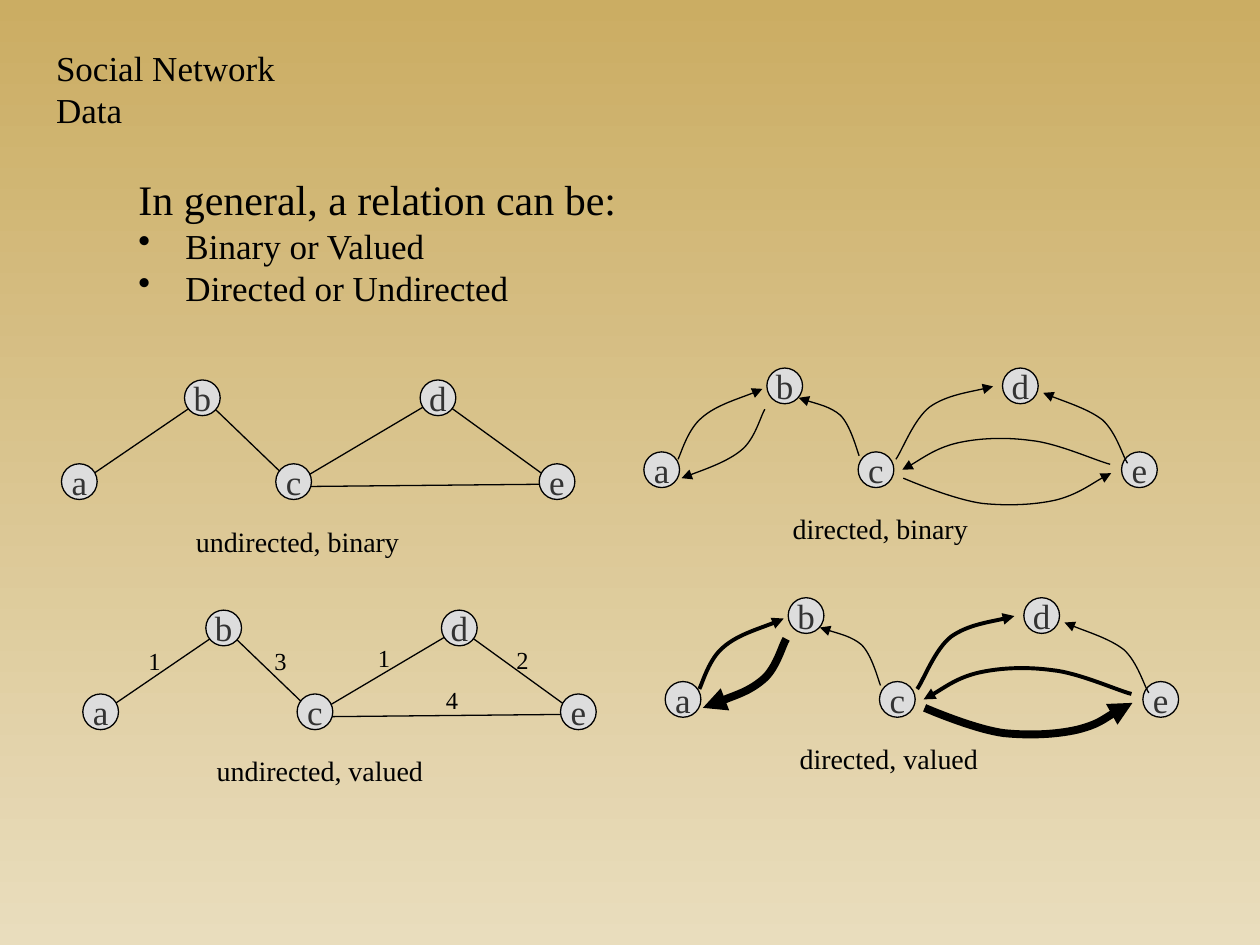
from pptx import Presentation
from pptx.dml.color import RGBColor
from pptx.enum.shapes import MSO_SHAPE
from pptx.enum.text import MSO_ANCHOR, PP_ALIGN
from pptx.oxml.ns import qn
from pptx.oxml.xmlchemy import OxmlElement
from pptx.util import Cm, Pt

OVAL = MSO_SHAPE.OVAL
MIDDLE = MSO_ANCHOR.MIDDLE
CENTER = PP_ALIGN.CENTER

# Offsets in cm from the top left corner of node a
NODE_SIZE = 0.72
NODES = {"a": (0, 0), "b": (2.48, -1.69), "c": (4.32, 0),
         "e": (9.63, 0), "d": (7.23, -1.69)}
EDGES = [(0.38, 0.38), (2.87, -1.32), (4.67, 0.41),
         (7.59, -1.32), (9.98, 0.41), (4.75, 0.46)]

# Bezier points: a start, then two controls and an end per segment
ARROWS = {
    "ab": [(0.69, 0.15), (0.76, 0), (0.89, -0.46), (1.17, -0.69),
           (1.45, -0.94), (2.13, -1.14), (2.39, -1.27)],
    "ba": [(2.44, -0.86), (2.36, -0.74), (2.24, -0.25), (1.96, -0.03),
           (1.68, 0.2), (1.02, 0.43), (0.76, 0.53)],
    "cd": [(5.08, 0.15), (5.21, -0.03), (5.44, -0.66), (5.77, -0.91),
           (6.1, -1.14), (6.76, -1.24), (7.04, -1.32)],
    "ce": [(5.23, 0.53), (5.49, 0.64), (6.3, 0.97), (6.83, 1.04),
           (7.34, 1.09), (7.87, 1.07), (8.31, 0.97),
           (8.74, 0.86), (9.19, 0.53), (9.42, 0.43)],
    "ed": [(9.75, 0.23), (9.65, 0.08), (9.53, -0.38), (9.25, -0.64),
           (8.97, -0.86), (8.31, -1.07), (8.05, -1.19)],
    "ec": [(9.4, 0.25), (9.12, 0.18), (8.33, -0.18), (7.8, -0.23),
           (7.29, -0.3), (6.76, -0.28), (6.32, -0.18),
           (5.89, -0.08), (5.44, 0.25), (5.21, 0.36)],
    "cb": [(4.34, 0.08), (4.29, -0.05), (4.17, -0.53), (3.96, -0.74),
           (3.76, -0.91), (3.3, -1.02), (3.12, -1.09)],
}
ARROW_WIDTHS = {"ab": 2.25, "ba": 4.5, "cd": 2.25, "ce": 4.5, "ec": 2.25}


def color(hex_text):
    return RGBColor.from_string(hex_text)


class NetworkSlide:
    FONT = "Times New Roman"
    INK = "000000"
    NODE_FILL = "DDDDDD"
    NODE_TEXT = "333333"
    THIN = 0.75

    def __init__(self, slide):
        self.slide = slide

    def background(self, top, bottom):
        fill = self.slide.background.fill
        fill.gradient()
        fill.gradient_angle = 270
        for stop, hex_text in zip(fill.gradient_stops, (top, bottom)):
            stop.color.rgb = color(hex_text)

    def style_text(self, paragraph, size, hex_text):
        paragraph.font.name = self.FONT
        paragraph.font.size = Pt(size)
        paragraph.font.color.rgb = color(hex_text)

    def style_line(self, shape, width):
        shape.shadow.inherit = False
        shape.line.color.rgb = color(self.INK)
        shape.line.width = Pt(width)

    def text(self, left, top, width, height, lines, wrap=False):
        """Add a text box from (text, size) pairs and return its frame."""
        box = self.slide.shapes.add_textbox(Cm(left), Cm(top), Cm(width), Cm(height))
        frame = box.text_frame
        frame.word_wrap = wrap
        for index, (text, size) in enumerate(lines):
            paragraph = frame.add_paragraph() if index else frame.paragraphs[0]
            paragraph.text = text
            self.style_text(paragraph, size, self.INK)
        return frame

    def bullet(self, paragraph, indent=0.95):
        properties = paragraph._p.get_or_add_pPr()
        properties.set("marL", str(Cm(indent)))
        properties.set("indent", str(-Cm(indent)))
        mark = OxmlElement("a:buChar")
        mark.set("char", "•")
        properties.append(mark)

    def node(self, left, top, name):
        shape = self.slide.shapes.add_shape(
            OVAL, Cm(left), Cm(top), Cm(NODE_SIZE), Cm(NODE_SIZE))
        self.style_line(shape, self.THIN)
        shape.fill.solid()
        shape.fill.fore_color.rgb = color(self.NODE_FILL)
        frame = shape.text_frame
        frame.word_wrap = False
        frame.vertical_anchor = MIDDLE
        frame.margin_left = frame.margin_right = 0
        frame.margin_top = frame.margin_bottom = 0
        paragraph = frame.paragraphs[0]
        paragraph.text = name
        paragraph.alignment = CENTER
        self.style_text(paragraph, 20, self.NODE_TEXT)

    def nodes(self, left, top):
        for name, (x, y) in NODES.items():
            self.node(left + x, top + y, name)

    def outline(self, left, top, offsets, width):
        points = [(Cm(left + x), Cm(top + y)) for x, y in offsets]
        builder = self.slide.shapes.build_freeform(*points[0])
        builder.add_line_segments(points[1:], close=False)
        shape = builder.convert_to_shape()
        shape.fill.background()
        self.style_line(shape, width)
        return shape

    def arrow(self, left, top, offsets, width):
        shape = self.outline(left, top, offsets, width)
        # Turn each three line segments into one Bezier segment
        outline = next(shape._element.iter(qn("a:path")))
        segments = outline.findall(qn("a:lnTo"))
        for start in range(0, len(segments), 3):
            curve = OxmlElement("a:cubicBezTo")
            for segment in segments[start:start + 3]:
                curve.append(segment[0])
                outline.remove(segment)
            outline.append(curve)
        tip = OxmlElement("a:tailEnd")
        tip.set("type", "triangle")
        shape.line._get_or_add_ln().append(tip)

    def undirected(self, left, top):
        self.outline(left, top, EDGES, self.THIN)
        self.nodes(left, top)

    def directed(self, left, top, widths):
        self.nodes(left, top)
        for name, offsets in ARROWS.items():
            self.arrow(left, top, offsets, widths.get(name, self.THIN))


def main():
    presentation = Presentation()
    presentation.slide_width = Cm(25.4)
    presentation.slide_height = Cm(19.05)
    page = NetworkSlide(presentation.slides.add_slide(presentation.slide_layouts[6]))
    page.background("CBAD63", "E9DDBD")

    # Title and introduction
    title = page.text(0.88, 0.82, 6.43, 1.1, [("Social Network Data", 20)], wrap=True)
    title.margin_right = Cm(1)
    body = page.text(2.54, 3.38, 10.24, 3, [
        ("In general, a relation can be:", 24),
        ("Binary or Valued", 20),
        ("Directed or Undirected", 20)], wrap=True)
    for paragraph in body.paragraphs[1:]:
        page.bullet(paragraph)

    # Four networks
    page.undirected(1.24, 9.35)
    page.directed(12.98, 9.11, {})
    page.undirected(1.67, 13.99)
    page.directed(13.41, 13.74, ARROW_WIDTHS)

    # Captions
    for left, top, width, caption in [
            (3.7, 10.44, 4.67, "undirected, binary"),
            (15.73, 10.19, 4.1, "directed, binary"),
            (4.12, 15.07, 4.72, "undirected, valued"),
            (15.87, 14.82, 4.17, "directed, valued")]:
        page.text(left, top, width, 0.94, [(caption, 16)])

    # Edge values
    for left, top, value in [(2.74, 12.9, "1"), (5.28, 12.9, "3"), (8.74, 13.69, "4"),
                             (10.16, 12.88, "2"), (7.37, 12.84, "1")]:
        page.text(left, top, 0.76, 0.84, [(value, 14)])

    presentation.save("out.pptx")


if __name__ == "__main__":
    main()
